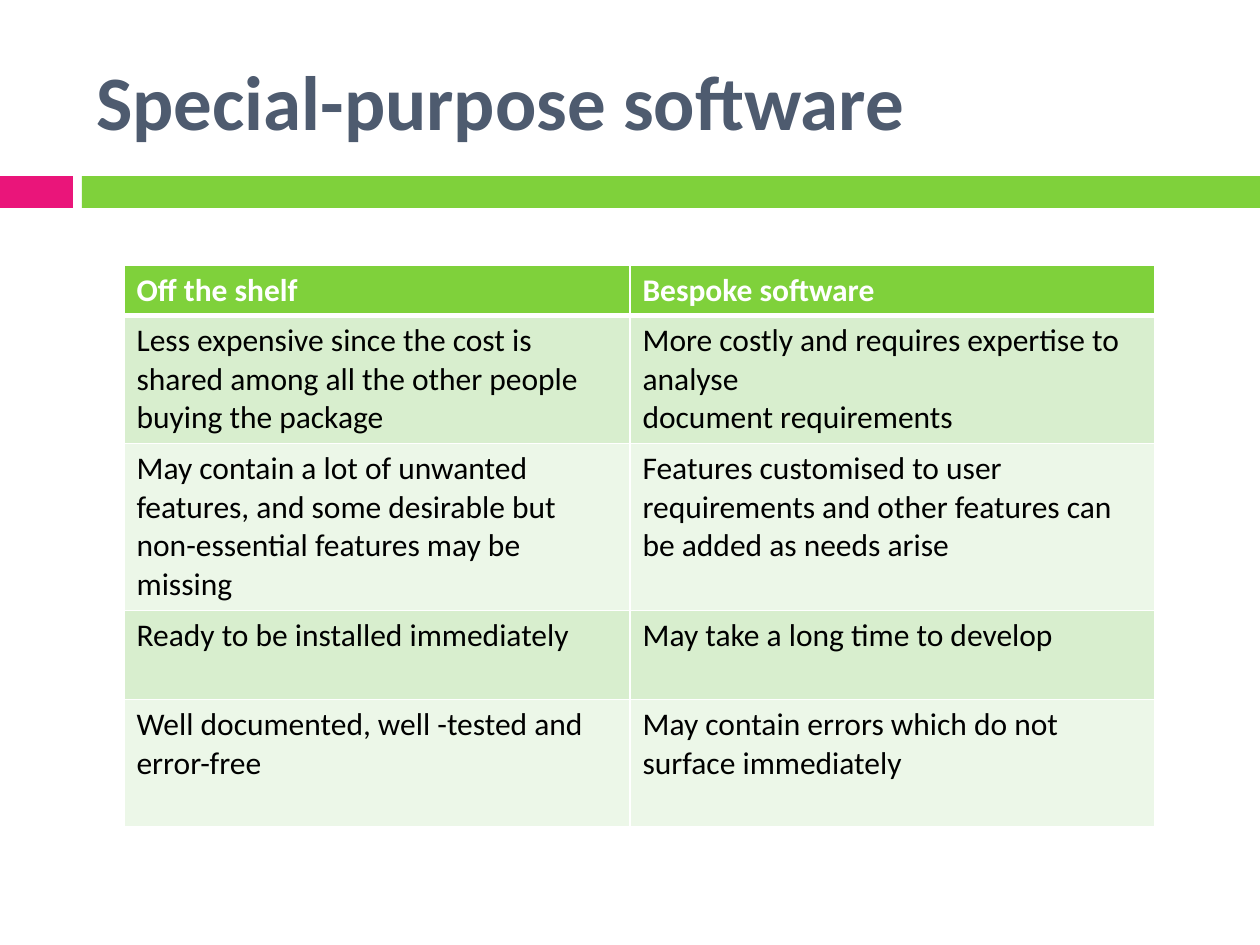
from lxml import etree
from pptx import Presentation
from pptx import util as u
from pptx.dml.color import RGBColor
from pptx.enum import shapes, text
from pptx.oxml import ns

PX_PER_INCH = 126
FONT = "Calibri"
PINK = RGBColor(0xEA, 0x15, 0x7A)
GREEN = RGBColor(0x7F, 0xD1, 0x3B)
SLATE = RGBColor(0x4E, 0x5B, 0x6F)
WHITE = RGBColor(0xFF, 0xFF, 0xFF)
BLACK = RGBColor(0x00, 0x00, 0x00)
BANDS = (RGBColor(0xD8, 0xEE, 0xCE), RGBColor(0xEC, 0xF7, 0xE8))

COMPARISON = (
    ("Off the shelf", "Bespoke software"),
    ("Less expensive since the cost is shared among all the other people buying the package",
     "More costly and requires expertise to analyse\ndocument requirements"),
    ("May contain a lot of unwanted features, and some desirable but "
     "non-essential features may be missing",
     "Features customised to user requirements and other features can be added as needs arise"),
    ("Ready to be installed immediately", "May take a long time to develop"),
    ("Well documented, well -tested and error-free",
     "May contain errors which do not surface immediately"),
)
COLUMN_WIDTHS = (506, 525)
ROW_HEIGHTS = (50, 128, 167, 89, 127)


def px(length):
    """Turn px into EMU."""
    return u.Emu(round(length * u.Inches(1) / PX_PER_INCH))


def set_font(paragraphs, size, color, bold):
    """Give every paragraph the same font."""
    for paragraph in paragraphs:
        font = paragraph.font
        font.name, font.size, font.bold = FONT, u.Pt(size), bold
        font.color.rgb = color


def add_title(slide, left, top, width, height):
    """Place the slide title, centred vertically in its box."""
    title = slide.shapes.add_textbox(*map(px, (left, top, width, height))).text_frame
    title.word_wrap = True
    title.vertical_anchor = text.MSO_ANCHOR.MIDDLE
    title.text = "Special-purpose software"
    set_font(title.paragraphs, 44, SLATE, True)


def add_divider(slide, left, top, width, height):
    """Place the pink tab and the green bar beside it."""
    tab_width, gap = 73, 9
    bar_offset = tab_width + gap
    for offset, part_width, color in ((0, tab_width, PINK),
                                      (bar_offset, width - bar_offset, GREEN)):
        part = slide.shapes.add_shape(shapes.MSO_SHAPE.RECTANGLE,
                                      *map(px, (left + offset, top, part_width, height)))
        part.shadow.inherit = False
        part.fill.solid()
        part.fill.fore_color.rgb = color
        part.line.fill.background()


def set_borders(cell, bottom, top):
    """Draw white borders, with given bottom and top widths in points."""
    properties = cell._tc.get_or_add_tcPr()
    for index, (side, width) in enumerate((("L", 1), ("R", 1), ("T", top), ("B", bottom))):
        line = etree.Element(ns.qn(f"a:ln{side}"), w=str(u.Pt(width)))
        fill = etree.SubElement(line, ns.qn("a:solidFill"))
        etree.SubElement(fill, ns.qn("a:srgbClr"), val=str(WHITE))
        properties.insert(index, line)


def add_comparison(slide, left, top):
    """Place the banded comparison table with its header row."""
    size = (sum(COLUMN_WIDTHS), sum(ROW_HEIGHTS))
    table = slide.shapes.add_table(len(ROW_HEIGHTS), len(COLUMN_WIDTHS),
                                   *map(px, (left, top, *size))).table
    for column, width in zip(table.columns, COLUMN_WIDTHS):
        column.width = px(width)
    for index, (row, height, wording) in enumerate(zip(table.rows, ROW_HEIGHTS, COMPARISON)):
        row.height = px(height)
        header = index == 0
        for cell, words in zip(row.cells, wording):
            cell.text = words
            set_font(cell.text_frame.paragraphs, 18, WHITE if header else BLACK, header)
            cell.fill.solid()
            cell.fill.fore_color.rgb = GREEN if header else BANDS[(index - 1) % 2]
            set_borders(cell, bottom=3 if header else 1, top=3 if index == 1 else 1)


def main():
    """Build and save the slide."""
    deck = Presentation()
    deck.slide_width, deck.slide_height = px(1260), px(945)
    slide = deck.slides.add_slide(deck.slide_layouts[6])
    add_divider(slide, 0, 176, 1260, 32)
    add_title(slide, 84, 32, 1124, 136)
    add_comparison(slide, 124, 265)
    deck.save("out.pptx")


if __name__ == "__main__":
    main()
